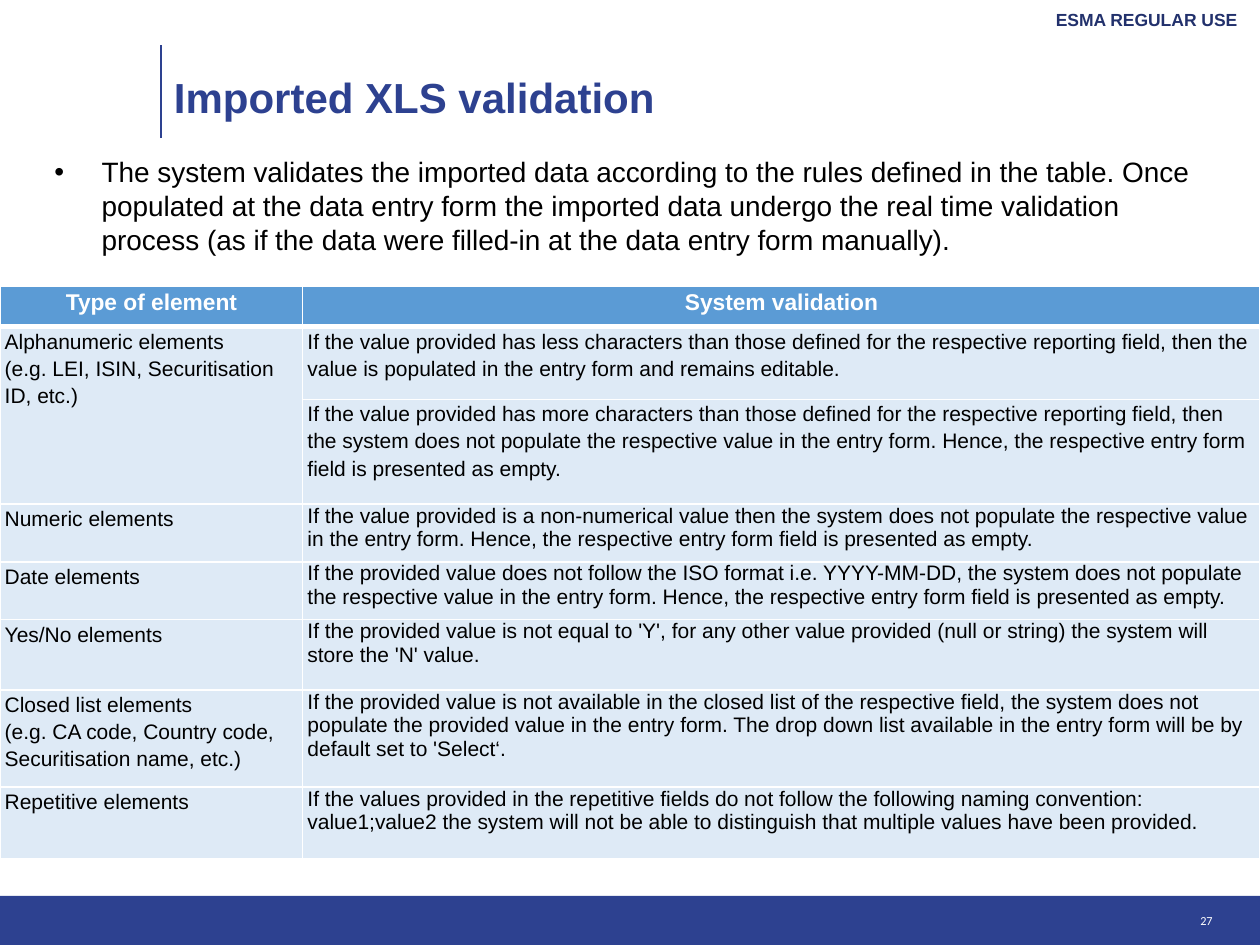
from lxml import etree
from pptx import Presentation
from pptx.dml.color import RGBColor
from pptx.enum import shapes, text
from pptx.oxml import ns
from pptx.util import Pt

NAVY = RGBColor(0x2D, 0x41, 0x90)
LABEL_BLUE = RGBColor(0x22, 0x31, 0x6C)
HEADER_BLUE = RGBColor(0x5B, 0x9B, 0xD5)
PALE_BLUE = RGBColor(0xDE, 0xEA, 0xF6)
WHITE = RGBColor(0xFF, 0xFF, 0xFF)
BLACK = RGBColor(0, 0, 0)


def write(shape, content, size, color, bold=False, align=text.PP_ALIGN.LEFT,
          anchor=text.MSO_ANCHOR.TOP, font="Arial"):
    frame = shape.text_frame
    frame.text = content
    frame.word_wrap = True
    frame.vertical_anchor = anchor
    paragraph = frame.paragraphs[0]
    paragraph.alignment = align
    paragraph.font.name = font
    paragraph.font.size = Pt(size)
    paragraph.font.bold = bold
    paragraph.font.color.rgb = color
    return paragraph


def place(shape, left, top, width, height):
    shape.left, shape.top = Pt(left), Pt(top)
    shape.width, shape.height = Pt(width), Pt(height)
    frame = shape.text_frame
    frame.auto_size = text.MSO_AUTO_SIZE.NONE
    frame.margin_left = frame.margin_top = frame.margin_right = frame.margin_bottom = 0


presentation = Presentation()
presentation.slide_width, presentation.slide_height = Pt(720), Pt(540)
slide = presentation.slides.add_slide(presentation.slide_layouts[1])
title, body = slide.placeholders

footer = slide.shapes.add_shape(shapes.MSO_SHAPE.RECTANGLE, 0, Pt(512), Pt(720), Pt(28))
footer.shadow.inherit = False
footer.fill.solid()
footer.fill.fore_color.rgb = NAVY
footer.line.fill.background()

title_rule = slide.shapes.add_connector(
    shapes.MSO_CONNECTOR.STRAIGHT, Pt(92), Pt(79), Pt(92), Pt(26))
title_rule.line.color.rgb = NAVY
title_rule.line.width = Pt(1)
etree.SubElement(title_rule._element.spPr, ns.qn("a:effectLst"))

place(title, 99.4, 38, 595, 34)
write(title, "Imported XLS validation", 24, NAVY, True, anchor=text.MSO_ANCHOR.MIDDLE)

place(body, 31, 88.5, 667.5, 425)
body.text_frame.text = ""
properties = body.text_frame.paragraphs[0]._p.get_or_add_pPr()
properties.set("marL", str(Pt(21.6)))
properties.set("indent", "0")
etree.SubElement(properties, ns.qn("a:buNone"))
introduction = write(
    body,
    "The system validates the imported data according to the rules defined in the table. "
    "Once populated at the data entry form the imported data undergo the real time "
    "validation process (as if the data were filled-in at the data entry form manually).",
    16, BLACK)
introduction.space_before = Pt(0)

marking = slide.shapes.add_textbox(0, 0, 0, 0)
place(marking, 479, 5, 228, 11.5)
write(marking, "ESMA REGULAR USE", 10, LABEL_BLUE, True, text.PP_ALIGN.RIGHT)

page_number = slide.shapes.add_textbox(0, 0, 0, 0)
place(page_number, 580, 522, 113, 8)
write(page_number, "27", 7, WHITE, align=text.PP_ALIGN.RIGHT, font="Calibri")

rows = [
    ("Type of element", "System validation"),
    ("Alphanumeric elements \v(e.g. LEI, ISIN, Securitisation ID, etc.)",
     "If the value provided has less characters than those defined for the respective "
     "reporting field, then the value is populated in the entry form and remains editable."),
    ("",
     "If the value provided has more characters than those defined for the respective "
     "reporting field, then the system does not populate the respective value in the entry "
     "form. Hence, the respective entry form field is presented as empty."),
    ("Numeric elements",
     "If the value provided is a non-numerical value then the system does not populate the "
     "respective value in the entry form. Hence, the respective entry form field is "
     "presented as empty."),
    ("Date elements",
     "If the provided value does not follow the ISO format i.e. YYYY-MM-DD, the system does "
     "not populate the respective value in the entry form. Hence, the respective entry form "
     "field is presented as empty."),
    ("Yes/No elements",
     "If the provided value is not equal to 'Y', for any other value provided (null or "
     "string) the system will store the 'N' value."),
    ("Closed list elements \v(e.g. CA code, Country code, Securitisation name, etc.)",
     "If the provided value is not available in the closed list of the respective field, the "
     "system does not populate the provided value in the entry form. The drop down list "
     "available in the entry form will be by default set to 'Select‘."),
    ("Repetitive elements",
     "If the values provided in the repetitive fields do not follow the following naming "
     "convention: value1;value2 the system will not be able to distinguish that multiple "
     "values have been provided."),
]
row_heights = [23.2, 41.5, 59.8, 33.1, 33.1, 40.2, 55.5, 41.2]

table = slide.shapes.add_table(len(rows), 2, 0, Pt(163.5), Pt(720), Pt(sum(row_heights))).table
table.first_row = table.horz_banding = False
table.columns[0].width, table.columns[1].width = Pt(173), Pt(547)
for row, height in zip(table.rows, row_heights):
    row.height = Pt(height)

for row_index, row in enumerate(rows):
    is_header = row_index == 0
    for column_index, content in enumerate(row):
        cell = table.cell(row_index, column_index)
        cell.margin_left = cell.margin_right = Pt(2.7)
        cell.margin_top = cell.margin_bottom = 0
        cell_properties = cell._tc.get_or_add_tcPr()
        for side in "LRTB":
            heavy = (is_header and side == "B") or (row_index == 1 and side == "T")
            border = etree.SubElement(
                cell_properties, ns.qn(f"a:ln{side}"), w=str(Pt(3 if heavy else 1)))
            border_fill = etree.SubElement(border, ns.qn("a:solidFill"))
            etree.SubElement(border_fill, ns.qn("a:srgbClr"), val=str(WHITE))
        cell.fill.solid()
        cell.fill.fore_color.rgb = HEADER_BLUE if is_header else PALE_BLUE
        if is_header:
            paragraph = write(cell, content, 13, WHITE, True, text.PP_ALIGN.CENTER,
                              text.MSO_ANCHOR.MIDDLE)
        else:
            paragraph = write(cell, content, 12, BLACK)
        if column_index == 0 or row_index < 3:
            paragraph.line_spacing = 1.15
            paragraph.space_after = Pt(12.5)

table.cell(1, 0).merge(table.cell(2, 0))

presentation.save("out.pptx")
